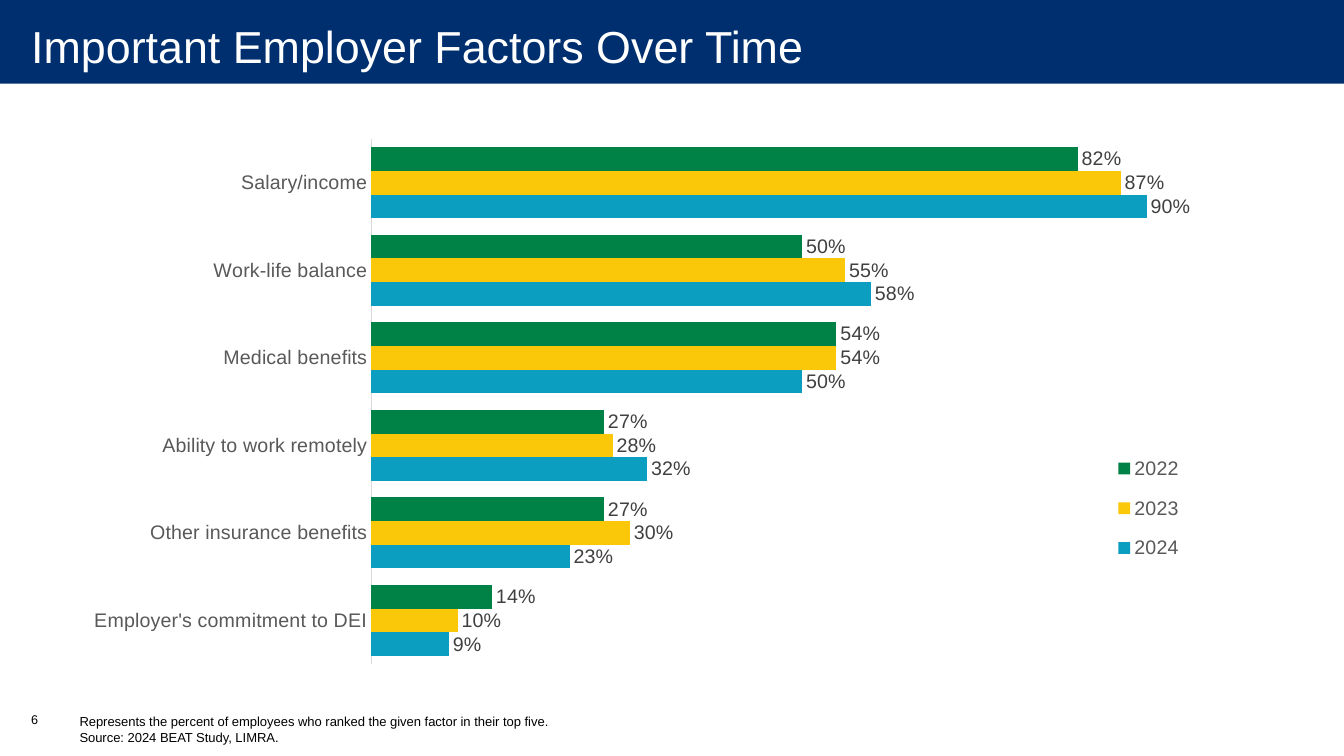
import pptx
import pptx.util
import pptx.chart.data
import pptx.dml.color
import pptx.enum.chart
import pptx.enum.shapes
import pptx.enum.text
import pptx.oxml
import pptx.oxml.ns

SLIDE_WIDTH, SLIDE_HEIGHT = 13.33, 7.5
FONT = "Arial"
TITLE = "Important Employer Factors Over Time"
FOOTNOTE = [
    "Represents the percent of employees who ranked the given factor in their top five.",
    "Source: 2024 BEAT Study, LIMRA.",
]
PAGE_NUMBER = "6"
YEARS = [("2024", "0B9EC1"), ("2023", "FAC809"), ("2022", "008145")]
FACTORS = [
    ("Employer's commitment to DEI", 0.09, 0.10, 0.14),
    ("Other insurance benefits", 0.23, 0.30, 0.27),
    ("Ability to work remotely", 0.32, 0.28, 0.27),
    ("Medical benefits", 0.50, 0.54, 0.54),
    ("Work-life balance", 0.58, 0.55, 0.50),
    ("Salary/income", 0.90, 0.87, 0.82),
]
BANNER_BOX = (0, -0.03, SLIDE_WIDTH, 0.86)
TITLE_BOX = (0.01, -0.03, SLIDE_WIDTH, 0.97)
CHART_BOX = (0.7, 1.27, 11.75, 5.43)
FOOTNOTE_BOX = (0.69, 7.03, 6.68, 0.41)
PAGE_BOX = (0.21, 7.01, 0.49, 0.4)
PLOT_SHARE = (0.254, 0.02, 0.727, 0.96)
LEGEND_SHARE = (0.87, 0.57, 0.08, 0.25)


def color(hex_value):
    return pptx.dml.color.RGBColor.from_string(hex_value)


def inches(box):
    return [pptx.util.Inches(length) for length in box]


def style(font, size, hex_value):
    font.name = FONT
    font.size = pptx.util.Pt(size)
    font.color.rgb = color(hex_value)


def add_text(slide, box, lines, size, hex_value):
    frame = slide.shapes.add_textbox(*inches(box)).text_frame
    frame.word_wrap = True
    frame.text = "\n".join(lines)
    for paragraph in frame.paragraphs:
        style(paragraph.font, size, hex_value)
    return frame


def layout_xml(shares, inner):
    target = '<c:layoutTarget val="inner"/>' if inner else ""
    modes = "".join(f'<c:{side}Mode val="edge"/>' for side in "xy")
    sizes = "".join(f'<c:{key} val="{share}"/>' for key, share in zip("xywh", shares))
    return pptx.oxml.parse_xml(
        f'<c:layout {pptx.oxml.ns.nsdecls("c")}><c:manualLayout>'
        f"{target}{modes}{sizes}</c:manualLayout></c:layout>"
    )


def place(element, shares, before, inner=False):
    for layout in element.findall(pptx.oxml.ns.qn("c:layout")):
        element.remove(layout)
    element.find(pptx.oxml.ns.qn(before)).addprevious(layout_xml(shares, inner))


def add_factor_chart(slide):
    data = pptx.chart.data.CategoryChartData(number_format="0%")
    names, *shares_by_year = zip(*FACTORS)
    data.categories = names
    for (year, _), shares in zip(YEARS, shares_by_year):
        data.add_series(year, shares)
    chart = slide.shapes.add_chart(
        pptx.enum.chart.XL_CHART_TYPE.BAR_CLUSTERED, *inches(CHART_BOX), data
    ).chart
    style(chart.font, 14, "000000")
    chart.has_title = False

    factor_axis = chart.category_axis
    factor_axis.major_tick_mark = pptx.enum.chart.XL_TICK_MARK.NONE
    factor_axis.format.line.color.rgb = color("D9D9D9")
    factor_axis.format.line.width = pptx.util.Pt(0.75)
    style(factor_axis.tick_labels.font, 14, "595959")
    share_axis = chart.value_axis
    share_axis.minimum_scale, share_axis.maximum_scale = 0, 1
    share_axis.has_major_gridlines = False
    share_axis.visible = False

    plot = chart.plots[0]
    plot.gap_width, plot.overlap = 70, 0
    plot.vary_by_categories = False
    for series, (_, hex_value) in zip(plot.series, YEARS):
        series.format.fill.solid()
        series.format.fill.fore_color.rgb = color(hex_value)
        labels = series.data_labels
        labels.show_value = True
        labels.number_format, labels.number_format_is_linked = "0%", False
        labels.position = pptx.enum.chart.XL_LABEL_POSITION.OUTSIDE_END
        style(labels.font, 14, "404040")

    chart.has_legend = True
    legend = chart.legend
    legend.position = pptx.enum.chart.XL_LEGEND_POSITION.RIGHT
    legend.include_in_layout = True
    style(legend.font, 14, "595959")
    plot_area = chart.element.find(".//" + pptx.oxml.ns.qn("c:plotArea"))
    legend_area = chart.element.find(".//" + pptx.oxml.ns.qn("c:legend"))
    place(plot_area, PLOT_SHARE, "c:barChart", inner=True)
    place(legend_area, LEGEND_SHARE, "c:overlay")


def main():
    deck = pptx.Presentation()
    deck.slide_width, deck.slide_height = inches((SLIDE_WIDTH, SLIDE_HEIGHT))
    slide = deck.slides.add_slide(deck.slide_layouts[6])

    banner = slide.shapes.add_shape(
        pptx.enum.shapes.MSO_SHAPE.RECTANGLE, *inches(BANNER_BOX)
    )
    banner.shadow.inherit = False
    banner.fill.solid()
    banner.fill.fore_color.rgb = color("002F70")
    banner.line.fill.background()

    title = add_text(slide, TITLE_BOX, [TITLE], 32, "FFFFFF")
    title.vertical_anchor = pptx.enum.text.MSO_ANCHOR.MIDDLE
    title.margin_left, title.margin_right = inches((0.3, 0.2))
    title.margin_top = title.margin_bottom = 0

    add_text(slide, FOOTNOTE_BOX, FOOTNOTE, 9.3, "000000")
    add_factor_chart(slide)
    add_text(slide, PAGE_BOX, [PAGE_NUMBER], 9, "000000")
    deck.save("out.pptx")


if __name__ == "__main__":
    main()
